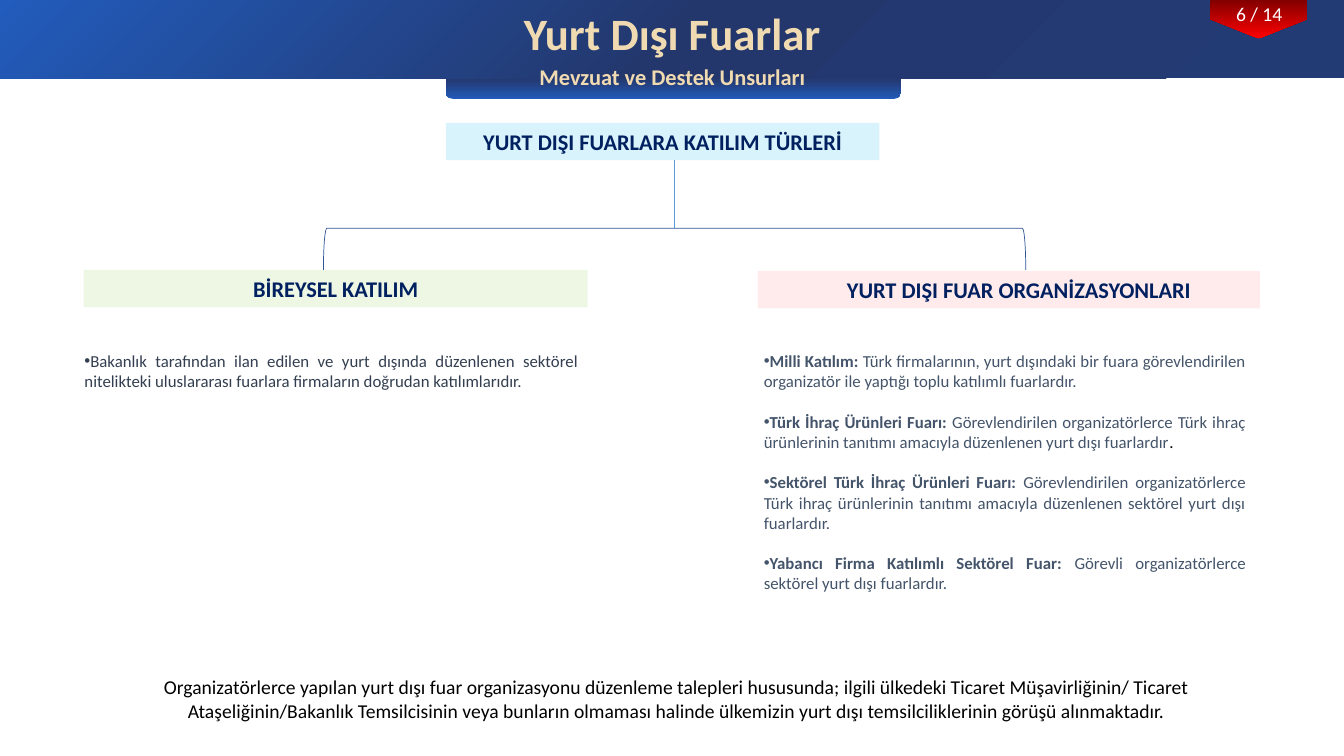
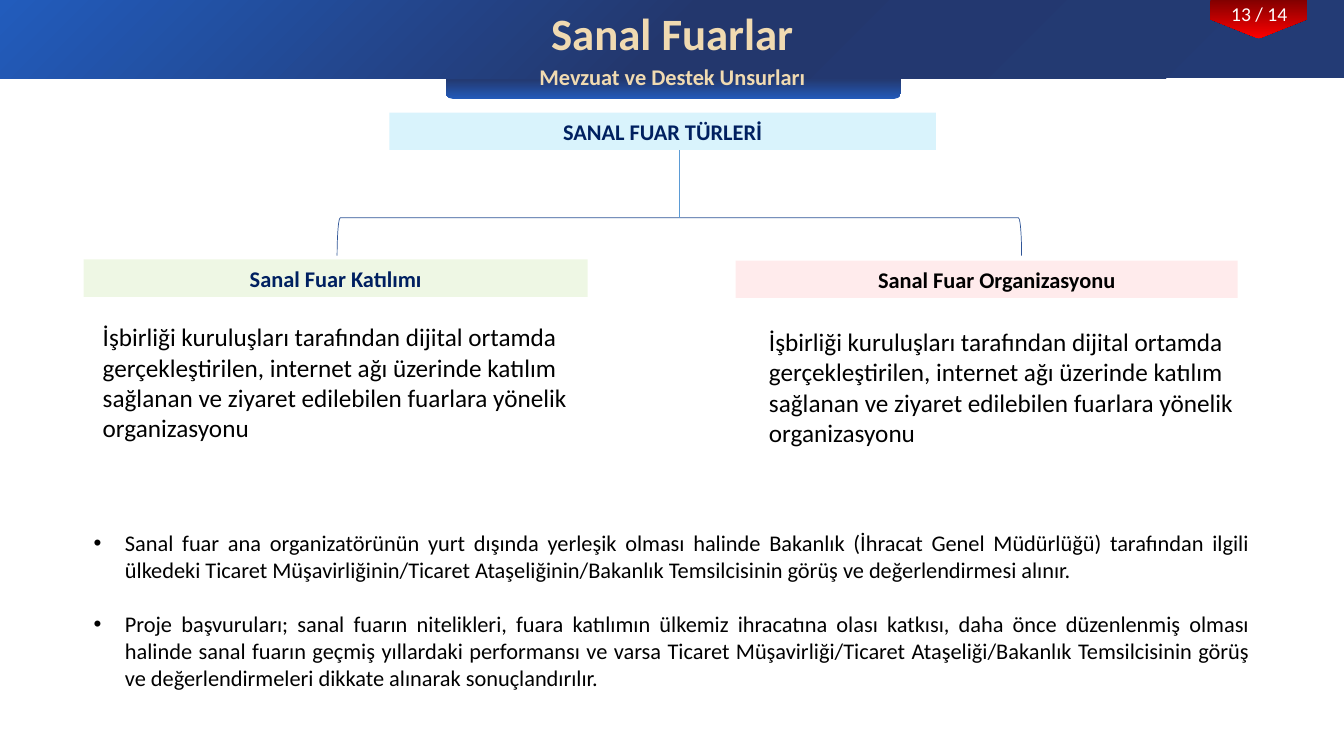
from lxml.etree import SubElement
from pptx import Presentation
from pptx.dml.color import RGBColor
from pptx.enum.shapes import MSO_CONNECTOR, MSO_SHAPE
from pptx.enum.text import MSO_ANCHOR, PP_ALIGN
from pptx.oxml.ns import qn
from pptx.util import Cm, Pt

FONT = "Calibri"
PAGE_WIDTH, PAGE_HEIGHT = 33.87, 19.05
BAR_HEIGHT = 0.94
ROOT_CENTER = 16.7
BRANCH_LEFT = 2.11

BLACK = RGBColor(0x00, 0x00, 0x00)
WHITE = RGBColor(0xFF, 0xFF, 0xFF)
CREAM = RGBColor(0xF0, 0xDA, 0xB1)
NAVY = RGBColor(0x00, 0x20, 0x60)
SLATE = RGBColor(0x44, 0x54, 0x6A)
DARK_SLATE = RGBColor(0x33, 0x3F, 0x50)
SKY = RGBColor(0x00, 0xB0, 0xF0)
GREEN = RGBColor(0x92, 0xD0, 0x50)
PINK = RGBColor(0xFF, 0x7C, 0x80)
BRACKET_BLUE = RGBColor(0x2F, 0x55, 0x97)
STEM_BLUE = RGBColor(0x5B, 0x9B, 0xD5)
TAB_STOPS = [(0, RGBColor(0x22, 0x5A, 0xB9)), (45, RGBColor(0x23, 0x3A, 0x73))]
BAND_STOPS = [
    (0, RGBColor(0x23, 0x3B, 0x75)),
    (50, RGBColor(0x23, 0x37, 0x6D)),
    (100, RGBColor(0x22, 0x5C, 0xBC)),
]
FLAG_STOPS = [(0, RGBColor(0x82, 0x00, 0x00)), (100, RGBColor(0xFF, 0x00, 0x00))]


def add_plain_shape(page, kind, left, top, width, height, rotation=0):
    if rotation == 90:
        left, top = left + (width - height) / 2, top + (height - width) / 2
        width, height = height, width
    shape = page.shapes.add_shape(kind, Cm(left), Cm(top), Cm(width), Cm(height))
    shape.rotation = rotation
    shape.shadow.inherit = False
    shape.line.fill.background()
    return shape


def fill_gradient(shape, stops, clockwise_angle):
    shape.fill.gradient()
    shape.fill.gradient_angle = (360 - clockwise_angle) % 360
    stop_list = shape._element.spPr.find(".//" + qn("a:gsLst"))
    for old_stop in list(stop_list):
        stop_list.remove(old_stop)
    for percent, color in stops:
        stop = SubElement(stop_list, qn("a:gs"), pos=str(percent * 1000))
        SubElement(stop, qn("a:srgbClr"), val=str(color))


def set_bullet(para, indent):
    properties = para._p.get_or_add_pPr()
    properties.set("marL", str(Cm(indent)))
    properties.set("indent", str(-Cm(indent)))
    SubElement(properties, qn("a:buFont"), typeface="Arial")
    SubElement(properties, qn("a:buChar"), char="•")


def write(frame, paragraphs, size, color, bold=False, align=PP_ALIGN.LEFT,
          bullet_indent=None, gap=0):
    frame.word_wrap = True
    for index, runs in enumerate(paragraphs):
        para = frame.add_paragraph() if index else frame.paragraphs[0]
        para.alignment = align
        if bullet_indent is not None:
            set_bullet(para, bullet_indent)
        if index:
            para.space_before = Pt(gap)
        for text, style in runs:
            span = para.add_run()
            span.text = text
            span.font.name = FONT
            span.font.size = Pt(size)
            span.font.bold = style.get("bold", bold)
            span.font.color.rgb = style.get("color", color)


def plain(text):
    return [(text, {})]


def add_text(page, left, top, width, height, paragraphs, size, color, **options):
    box = page.shapes.add_textbox(Cm(left), Cm(top), Cm(width), Cm(height))
    write(box.text_frame, paragraphs, size, color, **options)


def add_header(page, title, number):
    tab = add_plain_shape(page, MSO_SHAPE.ROUND_2_SAME_RECTANGLE,
                          11.23, 1.45, 11.48, 1.04, 180)
    fill_gradient(tab, TAB_STOPS, 90)
    band = add_plain_shape(page, MSO_SHAPE.RECTANGLE, 0, 0, PAGE_WIDTH, 1.98)
    fill_gradient(band, BAND_STOPS, 225)
    flag = add_plain_shape(page, MSO_SHAPE.PENTAGON, 30.5, 0, 2.44, 0.97, 90)
    fill_gradient(flag, FLAG_STOPS, 0)
    center = PP_ALIGN.CENTER
    add_text(page, 30.25, -0.08, 2.97, 0.86, [plain(f"{number} / 14")], 14, WHITE,
             align=center)
    add_text(page, 7.57, 0.03, 18.75, 1.63, [plain(title)], 32, CREAM,
             bold=True, align=center)
    add_text(page, 12.12, 1.47, 9.65, 0.94, [plain("Mevzuat ve Destek Unsurları")],
             16, CREAM, bold=True, align=center)


def add_bar(page, left, top, width, label, tint, color=NAVY, inset=0.25):
    bar = add_plain_shape(page, MSO_SHAPE.RECTANGLE, left, top, width, BAR_HEIGHT)
    bar.fill.solid()
    bar.fill.fore_color.rgb = tint
    tint_element = bar._element.spPr.find(".//" + qn("a:srgbClr"))
    SubElement(tint_element, qn("a:alpha"), val="15000")
    frame = bar.text_frame
    frame.vertical_anchor = MSO_ANCHOR.MIDDLE
    frame.margin_left = Cm(inset)
    write(frame, [plain(label)], 16, color, bold=True, align=PP_ALIGN.CENTER)


def add_tree(page, top, root_width, trunk, span_width, span_height, right_left,
             labels, right_color=NAVY):
    root_label, left_label, right_label = labels
    fork_top = top + 2.65
    branch_top = top + 3.7
    bracket = add_plain_shape(page, MSO_SHAPE.LEFT_BRACKET, trunk - span_width / 2,
                              fork_top, span_width, span_height, 90)
    bracket.fill.background()
    bracket.line.color.rgb = BRACKET_BLUE
    bracket.line.width = Pt(0.5)
    add_bar(page, ROOT_CENTER - root_width / 2, top, root_width, root_label, SKY)
    add_bar(page, BRANCH_LEFT, branch_top, 12.7, left_label, GREEN)
    add_bar(page, right_left, branch_top + 0.03, 12.65, right_label, PINK,
            right_color, inset=0.76)
    stem = page.shapes.add_connector(MSO_CONNECTOR.STRAIGHT, Cm(trunk),
                                     Cm(top + BAR_HEIGHT), Cm(trunk), Cm(fork_top))
    stem.line.color.rgb = STEM_BLUE
    stem.line.width = Pt(0.5)
    SubElement(stem._element.spPr, qn("a:effectLst"))


def build_foreign_fairs(page):
    add_header(page, "Yurt Dışı Fuarlar", 6)
    add_tree(page, 3.1, 10.92, 17, 17.7, 1.05, 19.1,
             ("YURT DIŞI FUARLARA KATILIM TÜRLERİ", "BİREYSEL KATILIM",
              "YURT DIŞI FUAR ORGANİZASYONLARI"))
    individual = ("Bakanlık tarafından ilan edilen ve yurt dışında düzenlenen sektörel "
                  "nitelikteki uluslararası fuarlara firmaların doğrudan katılımlarıdır.")
    strong = {"bold": True}
    organized = [
        [("Milli Katılım:", strong),
         (" Türk firmalarının, yurt dışındaki bir fuara görevlendirilen organizatör "
          "ile yaptığı toplu katılımlı fuarlardır.", {})],
        [("Türk İhraç Ürünleri Fuarı: ", strong),
         ("Görevlendirilen organizatörlerce Türk ihraç ürünlerinin tanıtımı amacıyla "
          "düzenlenen yurt dışı fuarlardır", {}),
         (".", {"color": BLACK})],
        [("Sektörel Türk İhraç Ürünleri Fuarı: ", strong),
         ("Görevlendirilen organizatörlerce Türk ihraç ürünlerinin tanıtımı amacıyla "
          "düzenlenen sektörel yurt dışı fuarlardır.", {})],
        [("Yabancı Firma Katılımlı Sektörel Fuar:", strong),
         (" Görevli organizatörlerce sektörel yurt dışı fuarlardır.", {})],
    ]
    listing = {"align": PP_ALIGN.JUSTIFY, "bullet_indent": 0, "gap": 14.6}
    add_text(page, 1.88, 8.71, 12.95, 1.75, [plain(individual)], 12, DARK_SLATE, **listing)
    add_text(page, 19, 8.71, 12.65, 6.42, organized, 12, SLATE, **listing)
    closing = ("Organizatörlerce yapılan yurt dışı fuar organizasyonu düzenleme talepleri "
               "hususunda; ilgili ülkedeki Ticaret Müşavirliğinin/ Ticaret "
               "Ataşeliğinin/Bakanlık Temsilcisinin veya bunların olmaması halinde "
               "ülkemizin yurt dışı temsilciliklerinin görüşü alınmaktadır.")
    add_text(page, 2.31, 16.89, 29.49, 1.45, [plain(closing)], 14, BLACK,
             align=PP_ALIGN.CENTER)


def build_virtual_fairs(page):
    add_header(page, "Sanal Fuarlar", 13)
    add_tree(page, 2.84, 13.77, 17.12, 17.25, 0.95, 18.54,
             ("SANAL FUAR TÜRLERİ", "Sanal Fuar Katılımı", "Sanal Fuar Organizasyonu"),
             right_color=BLACK)
    description = ("İşbirliği kuruluşları tarafından dijital ortamda gerçekleştirilen, "
                   "internet ağı üzerinde katılım sağlanan ve ziyaret edilebilen "
                   "fuarlara yönelik organizasyonu")
    for left, top in ((2.34, 7.98), (19.13, 8.1)):
        add_text(page, left, top, 12.42, 3.33, [plain(description)], 18, BLACK)
    conditions = [
        plain("Sanal fuar ana organizatörünün yurt dışında yerleşik olması halinde "
              "Bakanlık (İhracat Genel Müdürlüğü) tarafından ilgili ülkedeki Ticaret "
              "Müşavirliğinin/Ticaret Ataşeliğinin/Bakanlık Temsilcisinin görüş ve "
              "değerlendirmesi alınır."),
        plain("Proje başvuruları; sanal fuarın nitelikleri, fuara katılımın ülkemiz "
              "ihracatına olası katkısı, daha önce düzenlenmiş olması halinde sanal "
              "fuarın geçmiş yıllardaki performansı ve varsa Ticaret "
              "Müşavirliği/Ticaret Ataşeliği/Bakanlık Temsilcisinin görüş ve "
              "değerlendirmeleri dikkate alınarak sonuçlandırılır."),
    ]
    add_text(page, BRANCH_LEFT, 13.21, 29.64, 4.37, conditions, 16, BLACK,
             align=PP_ALIGN.JUSTIFY, bullet_indent=0.79, gap=19.5)


def main():
    deck = Presentation()
    deck.slide_width = Cm(PAGE_WIDTH)
    deck.slide_height = Cm(PAGE_HEIGHT)
    blank = deck.slide_layouts[6]
    for build in (build_foreign_fairs, build_virtual_fairs):
        build(deck.slides.add_slide(blank))
    deck.save("out.pptx")


if __name__ == "__main__":
    main()
